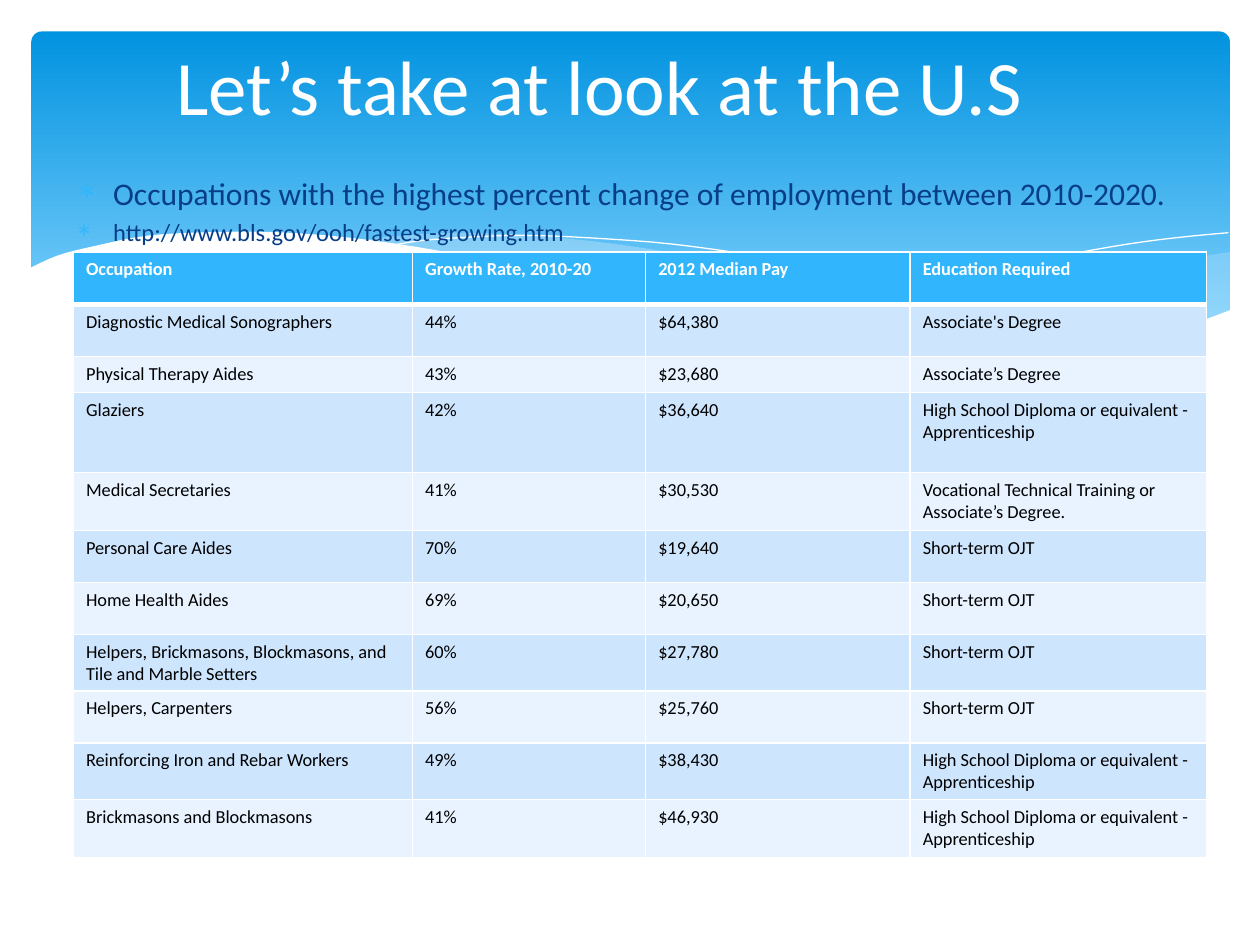
"""Build a slide with a wave banner, two bullets and a table of fast-growing occupations."""
from lxml import etree
from pptx import Presentation
from pptx import util as u
from pptx.dml.color import RGBColor
from pptx.enum import shapes, text
from pptx.oxml import ns

Pt = u.Pt
FONT = "Calibri"
WHITE = RGBColor(0xFF, 0xFF, 0xFF)
BLACK = RGBColor(0, 0, 0)
NAVY = RGBColor(0x07, 0x3E, 0x87)
ACCENT = RGBColor(0x31, 0xB6, 0xFD)
SKY_TOP = RGBColor(0x02, 0x93, 0xE0)
SKY_BOTTOM = RGBColor(0x83, 0xD3, 0xFE)
MIST = RGBColor(0xC6, 0xE7, 0xFC)
BANDS = (RGBColor(0xCE, 0xE5, 0xFE), RGBColor(0xE8, 0xF3, 0xFF))

TITLE = "Let’s take at look at the U.S"
BULLETS = [
    ("Occupations with the highest percent change of employment between 2010-2020.", 18),
    ("http://www.bls.gov/ooh/fastest-growing.htm", 14),
]
APPRENTICE = "High School Diploma or equivalent - Apprenticeship"
TRAINEE = "Short-term OJT"
COLUMN_WIDTHS = (193.8, 133.2, 151.2, 169.2)
OCCUPATIONS = [
    (30, ("Occupation", "Growth Rate, 2010-20", "2012 Median Pay", "Education Required")),
    (29.7, ("Diagnostic Medical Sonographers", "44%", "$64,380", "Associate's Degree")),
    (20.7, ("Physical Therapy Aides", "43%", "$23,680", "Associate’s Degree")),
    (45.8, ("Glaziers", "42%", "$36,640", APPRENTICE)),
    (33, ("Medical Secretaries", "41%", "$30,530",
          "Vocational Technical Training or Associate’s Degree.")),
    (29.7, ("Personal Care Aides", "70%", "$19,640", TRAINEE)),
    (29.7, ("Home Health Aides", "69%", "$20,650", TRAINEE)),
    (29.7, ("Helpers, Brickmasons, Blockmasons, and Tile and Marble Setters",
            "60%", "$27,780", TRAINEE)),
    (29.7, ("Helpers, Carpenters", "56%", "$25,760", TRAINEE)),
    (29.7, ("Reinforcing Iron and Rebar Workers", "49%", "$38,430", APPRENTICE)),
    (33, ("Brickmasons and Blockmasons", "41%", "$46,930", APPRENTICE)),
]

RIGHT_SWELL = [
    [(703, 144), (673, 149), (620, 160.5), (561, 174), (508, 185), (476, 191)],
    [(476, 191), (518, 196), (554, 199), (586, 200), (621, 198), (652, 193.5),
     (678, 186.5), (703, 178)],
]
WIDE_SWELL = [
    [(643, 196.5), (603, 191), (533.5, 178), (453, 160), (399.5, 147.5), (352, 139.5),
     (302.5, 134.5), (260, 133), (225.5, 135), (206, 137.5)],
    [(206, 137.5), (246, 143), (291, 152), (323, 160), (381.5, 173), (432.5, 183.5),
     (479, 191.5), (520, 197), (565, 200), (603, 200), (643, 196.5)],
]
LONG_CREST = [
    [(222.5, 140.5), (241, 137.5), (269, 135.5), (299.5, 134.5), (337.5, 136), (384, 139.5),
     (438, 147), (500.5, 157.5), (547, 168), (598.5, 180.5), (653, 196)],
]
RIGHT_CREST = [
    [(441.5, 185), (500.5, 169), (558.5, 155.5), (602, 147), (644.5, 139.5),
     (675.5, 135.5), (702, 133)],
]
FOREGROUND = [
    [(703.5, 177), (677, 186.5), (647, 193.5), (612, 198), (582.5, 199.5), (535.5, 197.5),
     (481, 191), (417, 180), (362, 168), (322, 158.5), (263, 145.5), (210, 137),
     (165.5, 133), (127.5, 132.5), (85.5, 134.5), (54.5, 140.5), (33, 146), (16.5, 153.5)],
    [(16.5, 237), (703.5, 237)],
]
WAVES = [
    (RIGHT_SWELL, MIST, 29),
    (WIDE_SWELL, MIST, 40),
    (LONG_CREST, None, None),
    (RIGHT_CREST, None, None),
    (FOREGROUND, WHITE, 100),
]


def smooth(knots, steps=4):
    """Return points on a Catmull-Rom curve through the knots."""
    if len(knots) < 3:
        return knots
    padded = [knots[0], *knots, knots[-1]]
    points = [knots[0]]
    for a, b, c, d in zip(padded, padded[1:], padded[2:], padded[3:]):
        for step in range(1, steps + 1):
            t = step / steps
            points.append(tuple(
                (2 * q + (r - p) * t + (2 * p - 5 * q + 4 * r - s) * t ** 2
                 + (3 * q - p - 3 * r + s) * t ** 3) / 2
                for p, q, r, s in zip(a, b, c, d)))
    return points


def add_element(parent, tag, **attributes):
    """Append a DrawingML element to the parent."""
    return etree.SubElement(parent, ns.qn(tag), attributes)


def add_wave(page, curves, color, opacity):
    """Draw a filled wave, or an open white crest when there is no colour."""
    points = [(Pt(x), Pt(y)) for curve in curves for x, y in smooth(curve)]
    builder = page.shapes.build_freeform(*points[0])
    builder.add_line_segments(points[1:], close=color is not None)
    wave = builder.convert_to_shape()
    wave.shadow.inherit = False
    if color is None:
        wave.fill.background()
        wave.line.color.rgb = WHITE
        wave.line.width = Pt(0)
        return
    wave.fill.solid()
    wave.fill.fore_color.rgb = color
    wave.line.fill.background()
    if opacity < 100:
        tint = wave.fill._xPr.find(".//" + ns.qn("a:srgbClr"))
        add_element(tint, "a:alpha", val=str(opacity * 1000))


def add_banner(page):
    """Draw the rounded gradient panel and the waves over it."""
    panel = page.shapes.add_shape(
        shapes.MSO_SHAPE.ROUNDED_RECTANGLE, Pt(18), Pt(18), Pt(684.7), Pt(194.4))
    panel.adjustments[0] = 0.03
    panel.shadow.inherit = False
    panel.line.fill.background()
    panel.fill.gradient()
    panel.fill.gradient_angle = 270
    stops = ((0, SKY_TOP), (0.9, SKY_BOTTOM))
    for stop, (position, color) in zip(panel.fill.gradient_stops, stops):
        stop.position = position
        stop.color.rgb = color
    for wave in WAVES:
        add_wave(page, *wave)


def style(para, size, color, bold=False):
    """Set the font of a paragraph."""
    para.font.name = FONT
    para.font.size = Pt(size)
    para.font.color.rgb = color
    para.font.bold = bold


def add_bullets(page):
    """Place the bulleted lines."""
    box = page.shapes.add_textbox(Pt(36), Pt(95.8), Pt(648), Pt(437.8))
    box.text_frame.word_wrap = True
    box.text_frame.text = "\n".join(line for line, size in BULLETS)
    for para, (line, size) in zip(box.text_frame.paragraphs, BULLETS):
        para.space_before = Pt(size * 0.2)
        properties = para._p.get_or_add_pPr()
        properties.set("marL", str(Pt(21.6)))
        properties.set("indent", str(Pt(-21.6)))
        add_element(add_element(properties, "a:buClr"), "a:srgbClr", val=str(ACCENT))
        add_element(properties, "a:buChar", char="∗")
        style(para, size, NAVY)


def add_title(page):
    """Place the title."""
    box = page.shapes.add_textbox(Pt(30.2), Pt(12.2), Pt(648), Pt(72))
    frame = box.text_frame
    frame.word_wrap = True
    frame.margin_right = Pt(30)
    frame.vertical_anchor = text.MSO_ANCHOR.MIDDLE
    frame.text = TITLE
    frame.paragraphs[0].alignment = text.PP_ALIGN.CENTER
    style(frame.paragraphs[0], 44, WHITE)


def add_borders(cell, top, bottom):
    """Give a cell white borders."""
    properties = cell._tc.get_or_add_tcPr()
    for side, width in (("L", 1), ("R", 1), ("T", top), ("B", bottom)):
        line = add_element(properties, "a:ln" + side, w=str(Pt(width)))
        add_element(add_element(line, "a:solidFill"), "a:srgbClr", val=str(WHITE))


def add_occupations(page):
    """Place the table of occupations."""
    table = page.shapes.add_table(
        len(OCCUPATIONS), len(COLUMN_WIDTHS), Pt(42), Pt(144),
        Pt(sum(COLUMN_WIDTHS)), Pt(sum(height for height, values in OCCUPATIONS))).table
    for column, width in zip(table.columns, COLUMN_WIDTHS):
        column.width = Pt(width)
    for index, (row, (height, values)) in enumerate(zip(table.rows, OCCUPATIONS)):
        row.height = Pt(height)
        header = index == 0
        for cell, value in zip(row.cells, values):
            cell.text = value
            style(cell.text_frame.paragraphs[0], 10.5, WHITE if header else BLACK, header)
            add_borders(cell, 3 if index == 1 else 1, 3 if header else 1)
            cell.fill.solid()
            cell.fill.fore_color.rgb = ACCENT if header else BANDS[(index - 1) % 2]


def main():
    """Build and save the deck."""
    deck = Presentation()
    deck.slide_width, deck.slide_height = Pt(720), Pt(540)
    page = deck.slides.add_slide(deck.slide_layouts[6])
    add_banner(page)
    add_bullets(page)
    add_title(page)
    add_occupations(page)
    deck.save("out.pptx")


if __name__ == "__main__":
    main()
